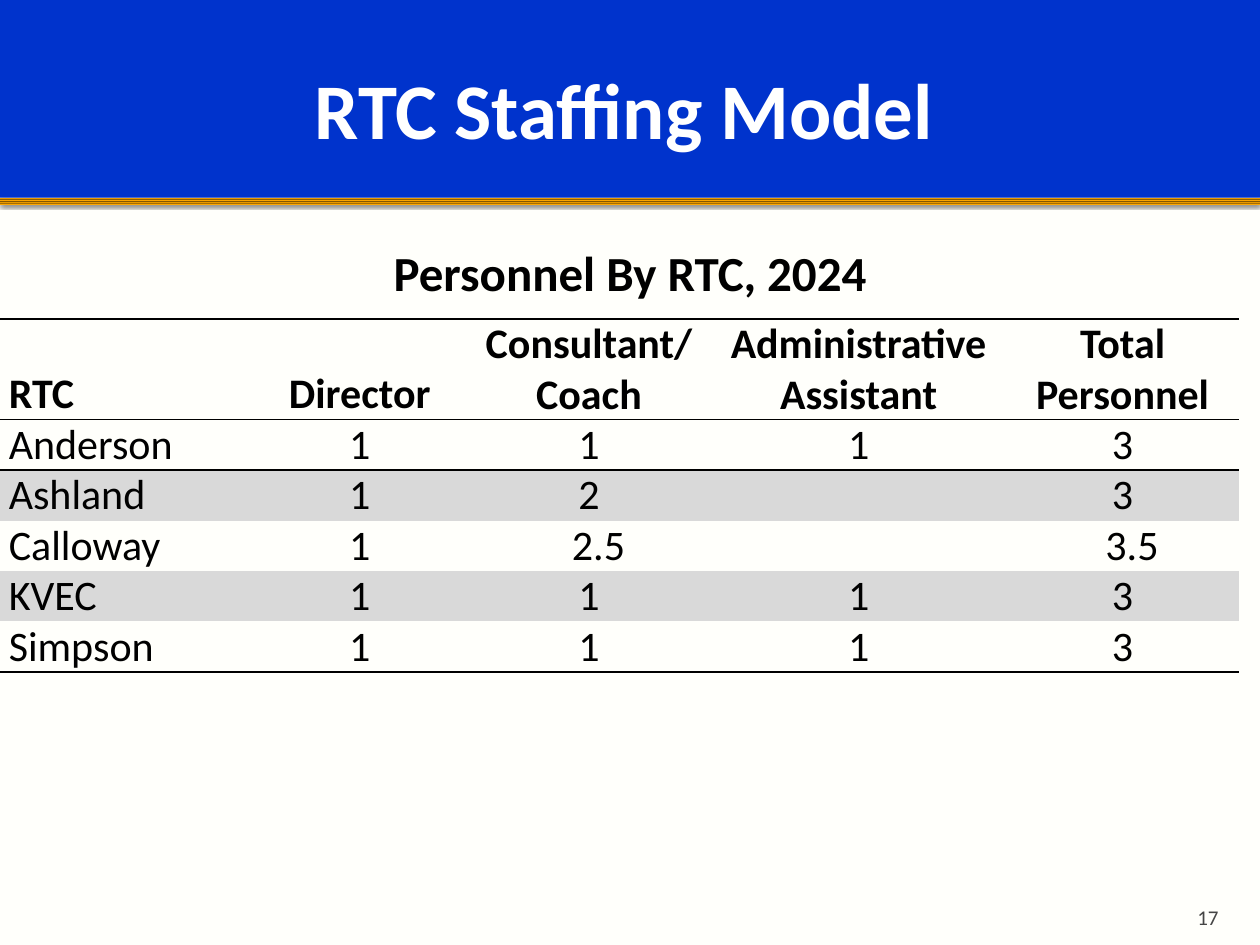
import pptx
import pptx.dml.color
import pptx.enum.shapes
import pptx.enum.text
import pptx.oxml
import pptx.oxml.ns
import pptx.util
from dataclasses import dataclass

Inches = pptx.util.Inches
Pt = pptx.util.Pt
ALIGN = pptx.enum.text.PP_ALIGN
ANCHOR = pptx.enum.text.MSO_ANCHOR
NAMESPACE = pptx.oxml.ns.nsdecls("a")

TITLE = "RTC Staffing Model"
SUBTITLE = "Personnel By RTC, 2024"
PAGE_NUMBER = "17"
HEADER = ["RTC", "Director", "Consultant/\nCoach", "Administrative Assistant", "Total Personnel"]
STAFF = [
    ["Anderson", "1", "1", "1", "3"],
    ["Ashland", "1", "2", "", "3"],
    ["Calloway", "1", "2.5", "", "3.5"],
    ["KVEC", "1", "1", "1", "3"],
    ["Simpson", "1", "1", "1", "3"],
]
COLUMN_WIDTHS = [2, 1.71, 1.93, 2.35, 1.84]
HEADER_HEIGHT, ROW_HEIGHT = 0.8, 0.4
CELL_INSET, DECIMAL_INDENT = 0.07, 0.15
NO_GRID_STYLE = "{2D5ABB26-0587-4C30-8999-92F81FD0307C}"


@dataclass(frozen=True)
class Theme:
    font: str = "Calibri"
    background: str = "FFFFFB"
    banner: str = "0033CC"
    title: str = "FFFFFF"
    text: str = "000000"
    page: str = "454545"
    band: str = "D9D9D9"
    gold_dark: str = "825600"
    gold_light: str = "FFA800"
    title_size: int = 45
    subtitle_size: int = 28
    table_size: int = 24
    page_size: int = 12


THEME = Theme()


def rgb(value):
    return pptx.dml.color.RGBColor.from_string(value)


def write(frame, text, size, color, bold, align, anchor, insets):
    frame.text = text
    frame.word_wrap = True
    frame.vertical_anchor = anchor
    frame.margin_left, frame.margin_top, frame.margin_right, frame.margin_bottom = map(Inches, insets)
    for paragraph in frame.paragraphs:
        paragraph.alignment = align
        paragraph.font.name = THEME.font
        paragraph.font.size = Pt(size)
        paragraph.font.bold = bold
        paragraph.font.color.rgb = rgb(color)


def add_bar(slide, top, height):
    bar = slide.shapes.add_shape(
        pptx.enum.shapes.MSO_SHAPE.RECTANGLE, 0, Inches(top), Inches(10), Inches(height))
    bar.shadow.inherit = False
    bar.line.fill.background()
    bar.fill.solid()
    bar.fill.fore_color.rgb = rgb(THEME.banner)
    return bar


def gild(bar):
    positions = [0, 13, 28, 43, 58, 72, 87, 100]
    colors = [THEME.gold_dark, THEME.gold_light] * 4
    stops = "".join(
        f'<a:gs pos="{position * 1000}"><a:srgbClr val="{color}"/></a:gs>'
        for position, color in zip(positions, colors))
    properties = bar._element.spPr
    solid = properties.find(pptx.oxml.ns.qn("a:solidFill"))
    properties.replace(solid, pptx.oxml.parse_xml(
        f'<a:gradFill {NAMESPACE}><a:gsLst>{stops}</a:gsLst><a:lin ang="5400000"/></a:gradFill>'))
    properties.find(pptx.oxml.ns.qn("a:effectLst")).append(pptx.oxml.parse_xml(
        f'<a:outerShdw {NAMESPACE} blurRad="{Pt(2.5)}" dist="{Pt(0.8)}" dir="5400000">'
        '<a:srgbClr val="000000"><a:alpha val="60000"/></a:srgbClr></a:outerShdw>'))


def add_border(cell, side, position):
    cell._tc.get_or_add_tcPr().insert(position, pptx.oxml.parse_xml(
        f'<a:{side} {NAMESPACE} w="{Pt(1)}"><a:solidFill>'
        f'<a:srgbClr val="{THEME.text}"/></a:solidFill></a:{side}>'))


def add_staff_table(slide):
    rows = [HEADER] + STAFF
    heights = [HEADER_HEIGHT] + [ROW_HEIGHT] * len(STAFF)
    frame = slide.shapes.add_table(
        len(rows), len(HEADER), 0, Inches(2.53), Inches(sum(COLUMN_WIDTHS)), Inches(sum(heights)))
    table = frame.table
    table._tbl.tblPr.find(pptx.oxml.ns.qn("a:tableStyleId")).text = NO_GRID_STYLE
    table.first_row = table.horz_banding = False
    for column, width in zip(table.columns, COLUMN_WIDTHS):
        column.width = Inches(width)
    for row_index, (values, height) in enumerate(zip(rows, heights)):
        is_header = row_index == 0
        table.rows[row_index].height = Inches(height)
        for column_index, value in enumerate(values):
            cell = table.cell(row_index, column_index)
            anchor = ANCHOR.BOTTOM if is_header else ANCHOR.TOP
            left = CELL_INSET + (DECIMAL_INDENT if "." in value else 0)
            write(cell.text_frame, value, THEME.table_size, THEME.text, is_header,
                  ALIGN.CENTER if column_index else ALIGN.LEFT, anchor, (0, 0, 0, 0))
            body = cell.text_frame._txBody.bodyPr
            body.attrib.clear()
            cell.vertical_anchor = anchor
            cell.margin_left, cell.margin_right = Inches(left), Inches(CELL_INSET)
            cell.margin_top = cell.margin_bottom = 0
            if row_index and row_index % 2 == 0:
                cell.fill.solid()
                cell.fill.fore_color.rgb = rgb(THEME.band)
            else:
                cell.fill.background()
            if is_header:
                add_border(cell, "lnT", 0)
                add_border(cell, "lnB", 1)
            elif row_index == 1:
                add_border(cell, "lnT", 0)
            elif row_index == len(STAFF):
                add_border(cell, "lnB", 0)


def main():
    presentation = pptx.Presentation()
    presentation.slide_width, presentation.slide_height = Inches(10), Inches(7.5)
    slide = presentation.slides.add_slide(presentation.slide_layouts[5])
    slide.background.fill.solid()
    slide.background.fill.fore_color.rgb = rgb(THEME.background)

    gild(add_bar(slide, 1.57, 0.05))
    add_bar(slide, 0, 1.57)

    title = slide.shapes.title
    slide.shapes._spTree.append(title._element)
    title.left, title.top, title.width, title.height = map(Inches, (0.5, 0.17, 9, 1.37))
    write(title.text_frame, TITLE, THEME.title_size, THEME.title, True,
          ALIGN.CENTER, ANCHOR.MIDDLE, (0.1, 0.05, 0.2, 0.05))

    page = slide.shapes.add_textbox(*map(Inches, (8.97, 7.08, 0.8, 0.3)))
    write(page.text_frame, PAGE_NUMBER, THEME.page_size, THEME.page, False,
          ALIGN.RIGHT, ANCHOR.BOTTOM, (0.1, 0.05, 0.1, 0))

    add_staff_table(slide)

    subtitle = slide.shapes.add_textbox(*map(Inches, (0.75, 1.84, 8.5, 0.64)))
    write(subtitle.text_frame, SUBTITLE, THEME.subtitle_size, THEME.text, True,
          ALIGN.CENTER, ANCHOR.MIDDLE, (0.1, 0.05, 0.1, 0.05))

    presentation.save("out.pptx")


if __name__ == "__main__":
    main()
